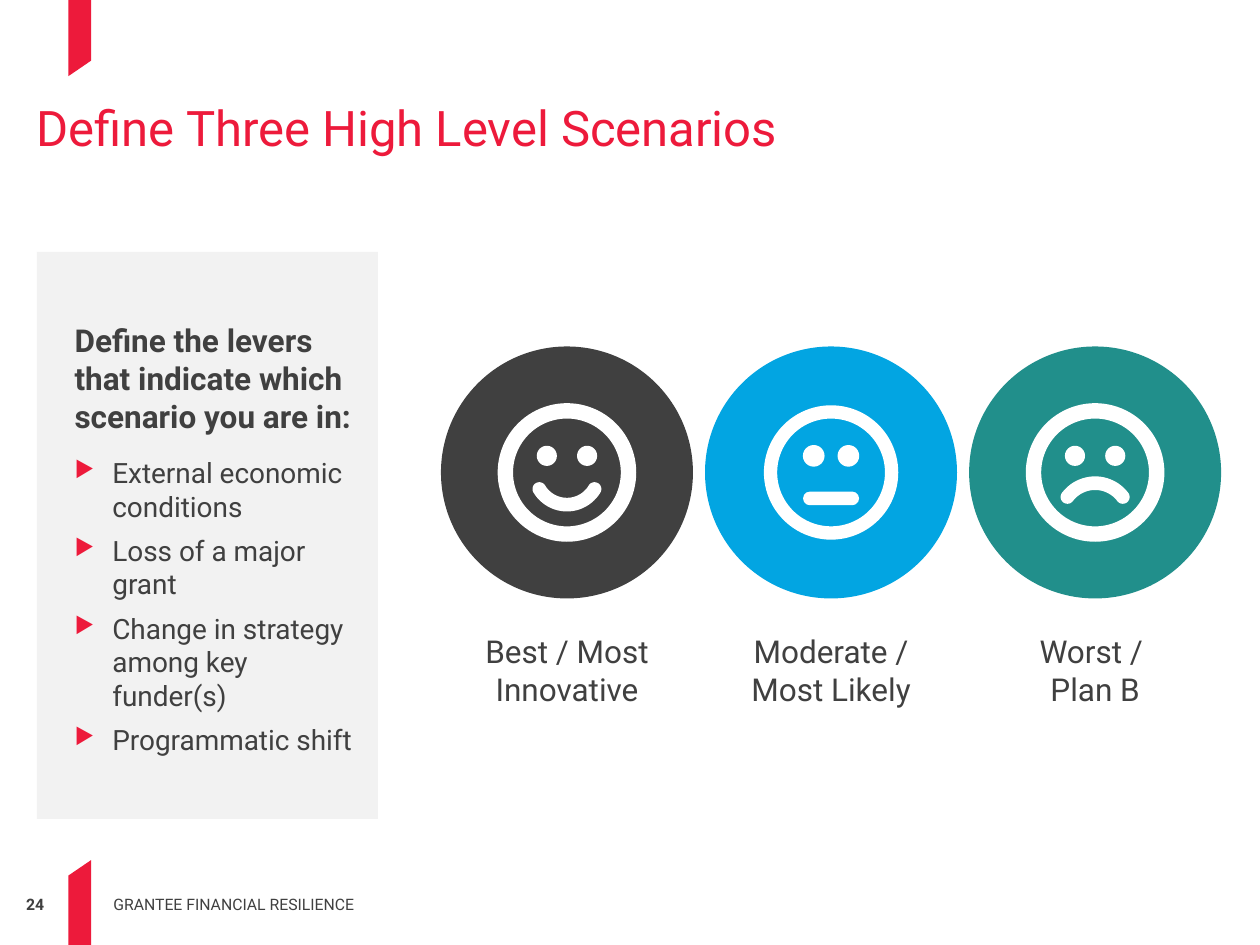
import math
from dataclasses import dataclass

import pptx
import pptx.dml.color
import pptx.enum.shapes
import pptx.enum.text
import pptx.oxml
import pptx.oxml.ns
import pptx.util

Pt = pptx.util.Pt
SHAPE = pptx.enum.shapes.MSO_SHAPE
ALIGN = pptx.enum.text.PP_ALIGN
ANCHOR = pptx.enum.text.MSO_ANCHOR

FONT = "Roboto"
COLORS = {
    "red": "ED1A3B",
    "dark": "404040",
    "panel": "F2F2F2",
    "blue": "02A5E2",
    "teal": "218F8B",
    "white": "FFFFFF",
}


@dataclass
class Mouth:
    """Arc with round ends; a radius of 0 makes a straight bar."""
    radius: float
    centre_dy: float = 0
    spread: float = 0      # half angle in degrees
    middle: float = 90     # direction of the arc's middle, 90 is down


@dataclass
class Scenario:
    label: str
    color: str
    face: float            # outer diameter of the face
    ring: float            # thickness of its outline
    eye: float             # eye diameter
    eye_dx: float
    mouth: Mouth


SCENARIOS = [
    Scenario("Best / Most Innovative", "dark", 79.2, 8.8, 11.5, 11.5,
             Mouth(18.4, 0, 59)),
    Scenario("Moderate / Most Likely", "blue", 76.8, 7.6, 12.4, 9.9,
             Mouth(0)),
    Scenario("Worst / \nPlan B", "teal", 79.2, 8.8, 11.5, 11.5,
             Mouth(19.8, 25.9, 53, 270)),
]
LEVERS = [
    "External economic conditions",
    "Loss of a major grant",
    "Change in strategy among key funder(s)",
    "Programmatic shift",
]
FIRST_X, PITCH, CENTRE_Y = 324, 150.9, 270
DISC, MOUTH_THICK, EYE_DY = 144, 7.8, -9.5


def rgb(name: str) -> pptx.dml.color.RGBColor:
    return pptx.dml.color.RGBColor.from_string(COLORS[name])


def paint(sp, color: str) -> None:
    sp.shadow.inherit = False
    sp.fill.solid()
    sp.fill.fore_color.rgb = rgb(color)
    sp.line.fill.background()


def add_preset(s, kind, x: float, y: float, w: float, h: float, color: str):
    sp = s.shapes.add_shape(kind, Pt(x), Pt(y), Pt(w), Pt(h))
    paint(sp, color)
    return sp


def add_centred(s, kind, cx: float, cy: float, w: float, h: float, color: str):
    return add_preset(s, kind, cx - w / 2, cy - h / 2, w, h, color)


def add_polygon(s, points: list, color: str) -> None:
    pts = [(Pt(x), Pt(y)) for x, y in points]
    fb = s.shapes.build_freeform(*pts[0], scale=1.0)
    fb.add_line_segments(pts[1:], close=True)
    paint(fb.convert_to_shape(), color)


def set_frame(tf, anchor, left=0.0, top=0.0, right=0.0, bottom=0.0) -> None:
    tf.word_wrap = True
    tf.vertical_anchor = anchor
    tf.margin_left, tf.margin_top = Pt(left), Pt(top)
    tf.margin_right, tf.margin_bottom = Pt(right), Pt(bottom)


def format_paragraph(p, size: float, color="dark", bold=False,
                     align=ALIGN.LEFT) -> None:
    p.alignment = align
    for r in p.runs:
        r.font.name, r.font.size, r.font.bold = FONT, Pt(size), bold
        r.font.color.rgb = rgb(color)


def add_text(s, text: str, x: float, y: float, w: float, h: float,
             size: float, anchor=ANCHOR.TOP, **style):
    tf = s.shapes.add_textbox(Pt(x), Pt(y), Pt(w), Pt(h)).text_frame
    set_frame(tf, anchor)
    tf.text = text
    for p in tf.paragraphs:
        format_paragraph(p, size, **style)
    return tf


def add_bullet(p, indent: float) -> None:
    pPr = p._p.get_or_add_pPr()
    pPr.set("marL", str(Pt(indent)))
    pPr.set("indent", str(-Pt(indent)))
    ns = pptx.oxml.ns.nsdecls("a")
    for xml in (f'<a:buClr {ns}><a:srgbClr val="{COLORS["red"]}"/></a:buClr>',
                f'<a:buSzPct {ns} val="80000"/>',
                f'<a:buChar {ns} char="▶"/>'):
        pPr.append(pptx.oxml.parse_xml(xml))


def arc(cx: float, cy: float, radius: float, start: float, end: float) -> list:
    steps = 24
    angles = [math.radians(start + (end - start) * i / steps)
              for i in range(steps + 1)]
    return [(cx + radius * math.cos(a), cy + radius * math.sin(a))
            for a in angles]


def add_mouth(s, cx: float, cy: float, m: Mouth) -> None:
    if not m.radius:
        bar = add_centred(s, SHAPE.ROUNDED_RECTANGLE, cx, cy + 14.8, 32,
                          MOUTH_THICK, "white")
        bar.adjustments[0] = 0.5
        return
    cy += m.centre_dy
    half = MOUTH_THICK / 2
    a, b = m.middle - m.spread, m.middle + m.spread
    (ax, ay), (bx, by) = (arc(cx, cy, m.radius, t, t)[0] for t in (a, b))
    add_polygon(s, arc(cx, cy, m.radius + half, a, b)
                + arc(bx, by, half, b, b + 180)
                + arc(cx, cy, m.radius - half, b, a)
                + arc(ax, ay, half, a + 180, a + 360), "white")


def add_scenario(s, sc: Scenario, cx: float) -> None:
    add_text(s, sc.label, cx - 66, 358.6, 132, 48, 18, ANCHOR.MIDDLE,
             align=ALIGN.CENTER)
    add_centred(s, SHAPE.OVAL, cx, CENTRE_Y, DISC, DISC, sc.color)
    ring = add_centred(s, SHAPE.DONUT, cx, CENTRE_Y, sc.face, sc.face, "white")
    ring.adjustments[0] = sc.ring / sc.face
    for dx in (-sc.eye_dx, sc.eye_dx):
        add_centred(s, SHAPE.OVAL, cx + dx, CENTRE_Y + EYE_DY, sc.eye, sc.eye,
                    "white")
    add_mouth(s, cx, CENTRE_Y, sc.mouth)


def add_levers(s) -> None:
    sp = add_preset(s, SHAPE.RECTANGLE, 21, 144, 195, 324, "panel")
    tf = sp.text_frame
    set_frame(tf, ANCHOR.BOTTOM, 21.6, 21.6, 14.4, 36)
    p = tf.paragraphs[0]
    p.text = "Define the levers that indicate which scenario you are in:"
    p.space_after = Pt(12)
    format_paragraph(p, 18, bold=True)
    for lever in LEVERS:
        p = tf.add_paragraph()
        p.text = lever
        p.space_after = Pt(6)
        add_bullet(p, 21.6)
        format_paragraph(p, 16)


def main() -> None:
    prs = pptx.Presentation()
    prs.slide_width, prs.slide_height = Pt(720), Pt(540)
    s = prs.slides.add_slide(prs.slide_layouts[6])

    # Red ribbons at the top and bottom edges
    add_polygon(s, [(39, 0), (52, 0), (52, 34.7), (39, 43.6)], "red")
    add_polygon(s, [(39, 540), (52, 540), (52, 491.5), (39, 500.4)], "red")

    # Page number, title and footer
    add_text(s, "24", 0, 511.2, 25.2, 10.8, 9, bold=True, align=ALIGN.RIGHT)
    title = add_text(s, "Define Three High Level Scenarios", 21, 54, 678, 75.6,
                     28, color="red")
    title.paragraphs[0].line_spacing = 1.05
    add_text(s, "GRANTEE FINANCIAL RESILIENCE", 64.8, 500.4, 250, 21.6, 9,
             ANCHOR.BOTTOM)

    # Levers panel and the three scenarios
    add_levers(s)
    for i, sc in enumerate(SCENARIOS):
        add_scenario(s, sc, FIRST_X + i * PITCH)

    prs.save("out.pptx")


if __name__ == "__main__":
    main()
